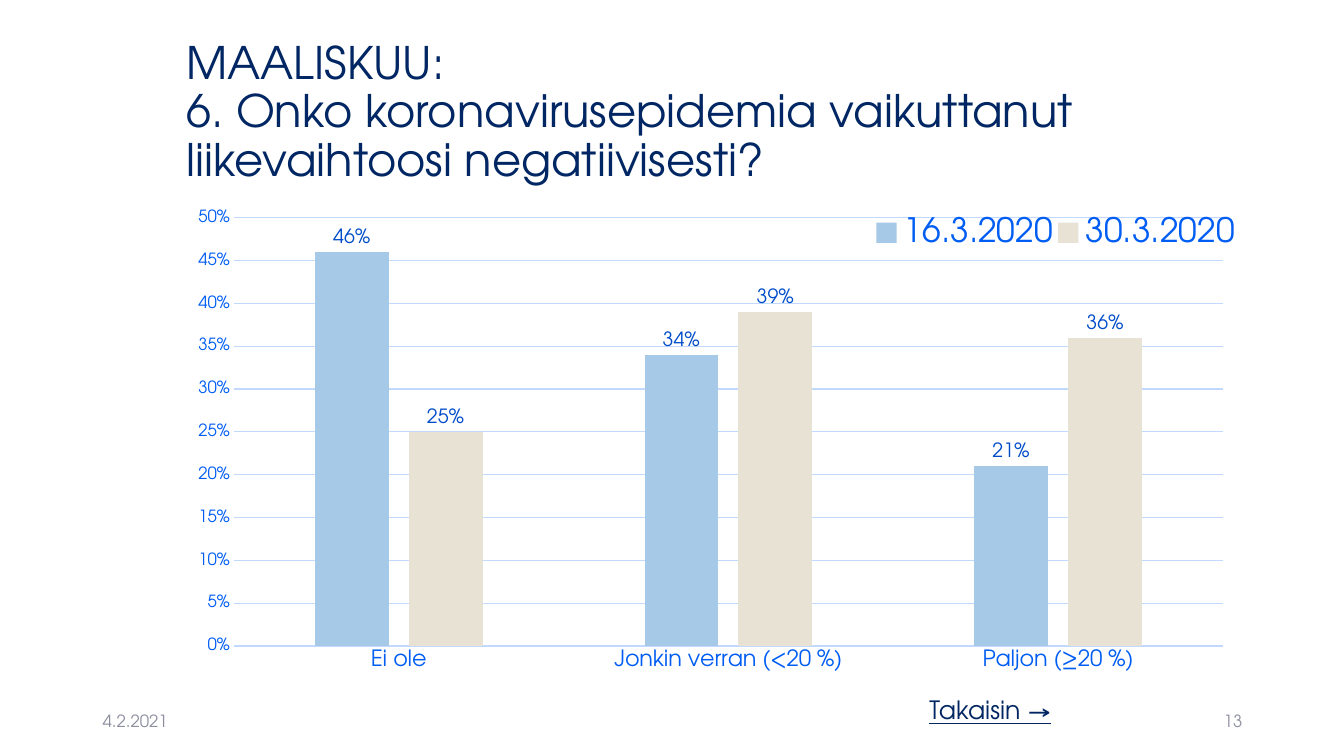
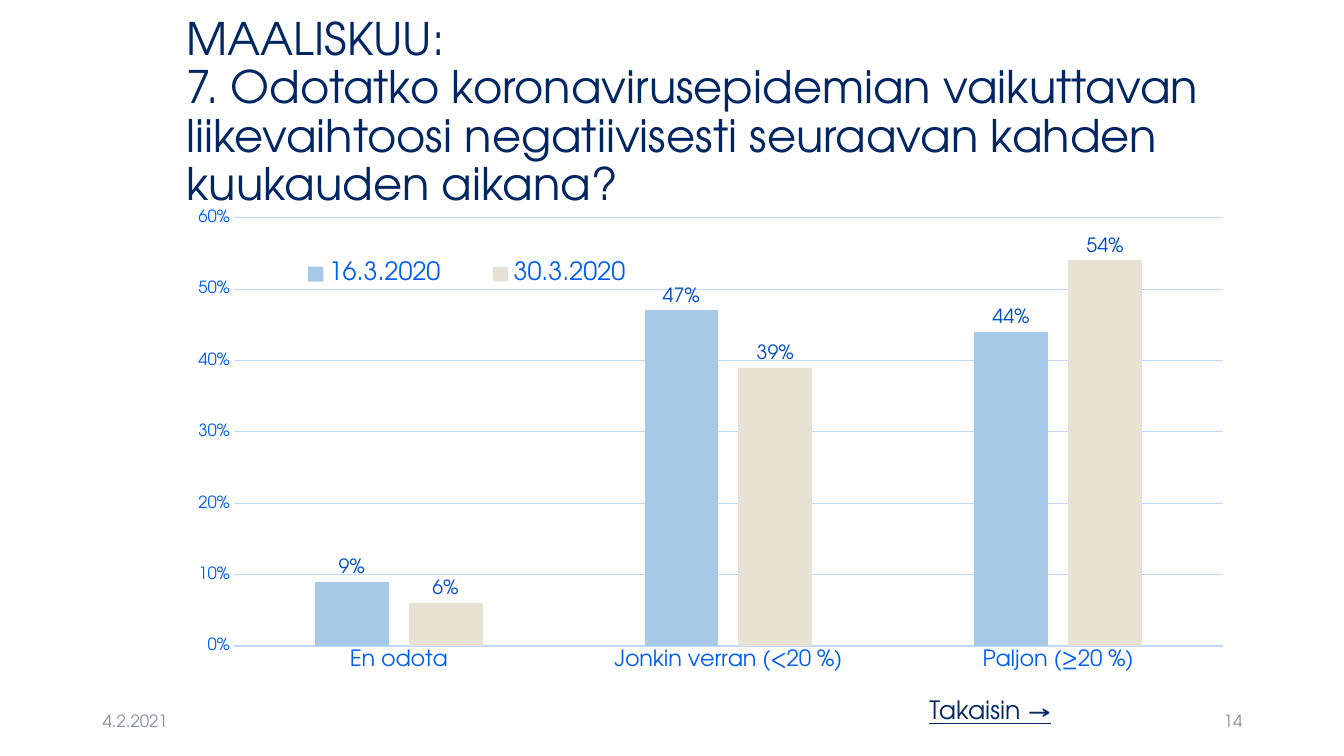
from dataclasses import dataclass

from lxml import etree
from pptx import Presentation
from pptx.chart.data import CategoryChartData
from pptx.dml.color import RGBColor
from pptx.enum.chart import (XL_CHART_TYPE, XL_LABEL_POSITION,
                             XL_LEGEND_POSITION, XL_TICK_MARK)
from pptx.enum.text import MSO_ANCHOR, PP_ALIGN
from pptx.oxml.ns import qn
from pptx.util import Pt

COLUMNS = XL_CHART_TYPE.COLUMN_CLUSTERED
OUTSIDE = XL_LABEL_POSITION.OUTSIDE_END
BOTTOM = XL_LEGEND_POSITION.BOTTOM
NO_TICK = XL_TICK_MARK.NONE
MIDDLE, TOP = MSO_ANCHOR.MIDDLE, MSO_ANCHOR.TOP
LEFT, RIGHT = PP_ALIGN.LEFT, PP_ALIGN.RIGHT

PX = 9144  # EMU per px, 100 px to the inch
FONT = "TeX Gyre Adventor"
COLOR = {
    "navy": "002663",
    "gray": "8C8E9F",
    "blue": "005DF3",
    "label": "004DCA",
    "grid": "C1D9FF",
    "sky": "A5C9E7",
    "sand": "E8E2D5",
}
DATES = (("16.3.2020", "sky"), ("30.3.2020", "sand"))
SIZES = ("some", "much")
GROUPS = ("Jonkin verran (<20 %)", "Paljon (≥20 %)")


@dataclass(frozen=True)
class Box:
    left: int
    top: int
    width: int
    height: int

    def emu(self) -> tuple[int, int, int, int]:
        return (self.left * PX, self.top * PX,
                self.width * PX, self.height * PX)


@dataclass(frozen=True)
class Style:
    size: int
    color: str
    anchor: int = MIDDLE
    align: int = LEFT
    spacing: float = 1.0
    under: bool = False


@dataclass(frozen=True)
class Legend:
    box: Box
    size: int


@dataclass(frozen=True)
class Question:
    number: int
    title: str
    none: str
    values: tuple[tuple[float, ...], ...]
    top: float
    step: float
    legend: Legend


# Shared places and text styles
TITLE = Box(175, 40, 1059, 145)
CHART = Box(175, 200, 1059, 476)
PLOT = Box(232, 216, 981, 425)
DATE = Box(92, 695, 300, 40)
NUMBER = Box(942, 695, 300, 40)
BACK = Box(912, 684, 272, 40)
HEAD = Style(32, "navy", spacing=0.9)
FOOT = Style(12, "gray")
PAGE = Style(12, "gray", align=RIGHT)
LINK = Style(18, "navy", anchor=TOP, under=True)

QUESTIONS = (
    Question(13, "6. Onko koronavirusepidemia vaikuttanut "
             "liikevaihtoosi negatiivisesti?", "Ei ole",
             ((0.46, 0.34, 0.21), (0.25, 0.39, 0.36)), 0.5, 0.05,
             Legend(Box(864, 212, 366, 38), 24)),
    Question(14, "7. Odotatko koronavirusepidemian vaikuttavan "
             "liikevaihtoosi negatiivisesti seuraavan kahden "
             "kuukauden aikana?", "En odota",
             ((0.09, 0.47, 0.44), (0.06, 0.39, 0.54)), 0.6, 0.1,
             Legend(Box(262, 253, 402, 38), 18)),
)


def rgb(name: str) -> RGBColor:
    return RGBColor.from_string(COLOR[name])


def set_font(font, size: int, color: str) -> None:
    font.name = FONT
    font.size = Pt(size)
    font.color.rgb = rgb(color)


def add_text(slide, box: Box, text: str, style: Style) -> None:
    frame = slide.shapes.add_textbox(*box.emu()).text_frame
    frame.word_wrap = True
    frame.vertical_anchor = style.anchor
    para = frame.paragraphs[0]
    para.text = text
    para.alignment = style.align
    para.line_spacing = style.spacing
    for run in para.runs:
        set_font(run.font, style.size, style.color)
        run.font.underline = style.under


def make_layout(box: Box, inner: bool):
    """Place a chart part at a box given in slide px."""
    layout = etree.Element(qn("c:layout"))
    manual = etree.SubElement(layout, qn("c:manualLayout"))
    parts = [("layoutTarget", "inner")] if inner else []
    parts += [
        ("xMode", "edge"),
        ("yMode", "edge"),
        ("x", (box.left - CHART.left) / CHART.width),
        ("y", (box.top - CHART.top) / CHART.height),
        ("w", box.width / CHART.width),
        ("h", box.height / CHART.height),
    ]
    for tag, value in parts:
        etree.SubElement(manual, qn(f"c:{tag}")).set("val", str(value))
    return layout


def style_axes(chart, item: Question) -> None:
    groups, scale = chart.category_axis, chart.value_axis
    for axis, size in ((groups, 16), (scale, 12)):
        axis.major_tick_mark = NO_TICK
        axis.minor_tick_mark = NO_TICK
        set_font(axis.tick_labels.font, size, "blue")
    scale.minimum_scale = 0
    scale.maximum_scale = item.top
    scale.major_unit = item.step
    scale.tick_labels.number_format = "0%"
    scale.tick_labels.number_format_is_linked = False
    scale.format.line.fill.background()
    for line in (groups.format.line, scale.major_gridlines.format.line):
        line.color.rgb = rgb("grid")
        line.width = Pt(0.75)


def style_bars(plot) -> None:
    plot.gap_width = 219
    plot.overlap = -27
    plot.vary_by_categories = False
    for bars, (_, color) in zip(plot.series, DATES):
        bars.format.fill.solid()
        bars.format.fill.fore_color.rgb = rgb(color)
        labels = bars.data_labels
        labels.show_value = True
        labels.number_format = "0%"
        labels.number_format_is_linked = False
        labels.position = OUTSIDE
        set_font(labels.font, 14, "label")


def add_legend(chart, legend: Legend) -> None:
    chart.has_legend = True
    key = chart.legend
    key.position = BOTTOM
    key.include_in_layout = True
    set_font(key.font, legend.size, "blue")
    root = key._element
    for old in root.findall(qn("c:layout")):
        root.remove(old)
    root.find(qn("c:legendPos")).addnext(make_layout(legend.box, False))


def add_bars(slide, item: Question) -> None:
    data = CategoryChartData(number_format="0%")
    data.categories = (item.none, *GROUPS)
    for (date, _), values in zip(DATES, item.values):
        data.add_series(date, values)
    chart = slide.shapes.add_chart(COLUMNS, *CHART.emu(), data).chart
    chart.has_title = False
    set_font(chart.font, 10, "navy")
    style_axes(chart, item)
    style_bars(chart.plots[0])
    add_legend(chart, item.legend)
    area = chart._chartSpace.find(".//" + qn("c:plotArea"))
    for old in area.findall(qn("c:layout")):
        area.remove(old)
    area.insert(0, make_layout(PLOT, True))


def add_slide(deck, item: Question) -> None:
    slide = deck.slides.add_slide(deck.slide_layouts[6])
    # Title and footer
    add_text(slide, TITLE, f"MAALISKUU:\v{item.title}", HEAD)
    add_text(slide, DATE, "4.2.2021", FOOT)
    add_text(slide, NUMBER, str(item.number), PAGE)
    # Answers and the way back
    add_bars(slide, item)
    add_text(slide, BACK, "Takaisin →", LINK)


def main() -> None:
    deck = Presentation()
    deck.slide_width, deck.slide_height = 1333 * PX, 750 * PX
    for item in QUESTIONS:
        add_slide(deck, item)
    deck.save("out.pptx")


if __name__ == "__main__":
    main()
